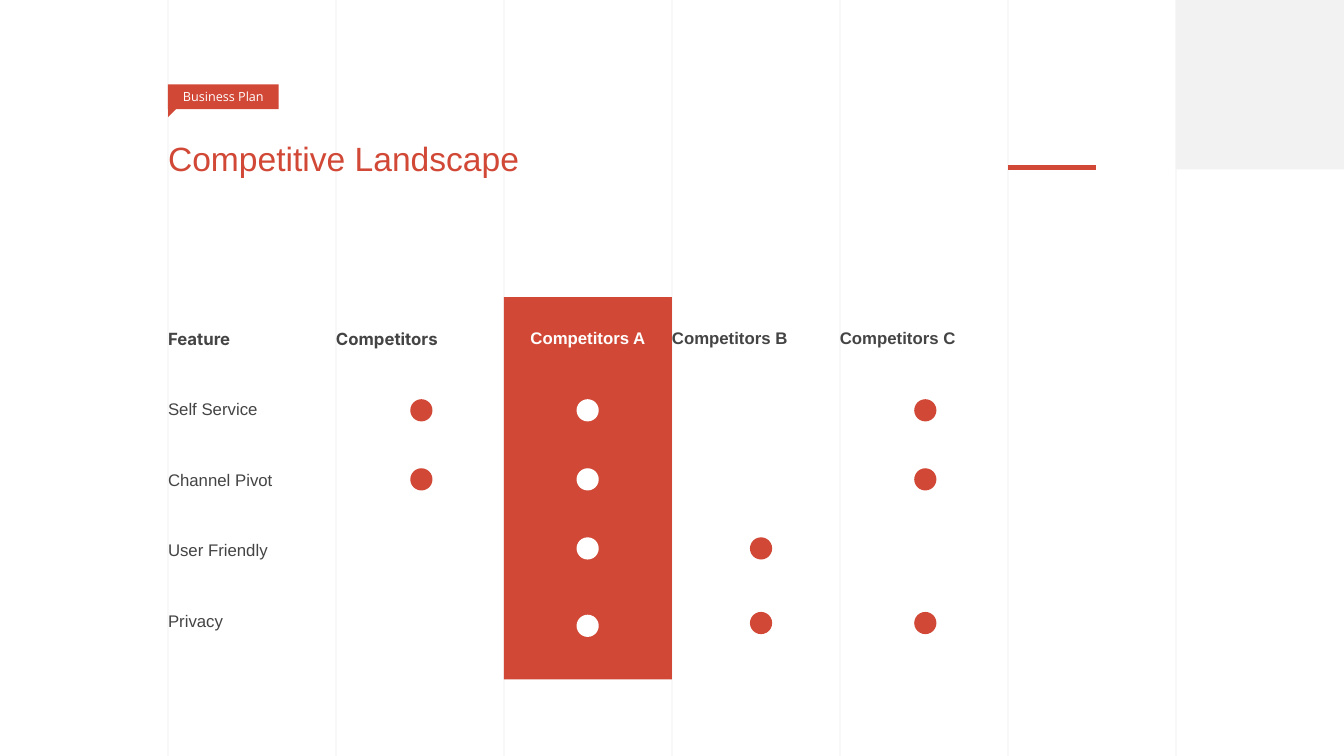
from dataclasses import dataclass
from typing import Any

from lxml.etree import SubElement
from pptx import Presentation
from pptx.dml.color import RGBColor
from pptx.enum.shapes import MSO_CONNECTOR, MSO_SHAPE
from pptx.enum.text import MSO_ANCHOR, PP_ALIGN
from pptx.oxml.ns import qn
from pptx.util import Cm, Pt

HUES = {"red": "D14836", "white": "FFFFFF", "ink": "444444", "pale": "F2F2F2"}
WIDE, HIGH = 33.87, 19.05
COL = WIDE / 8
ROW = 1.78
DOT = 0.56
DOT_TOP, DOT_STEP = 10.06, 1.74
PLAIN = "{2D5ABB26-0587-4C30-8999-92F81FD0307C}"
ZERO = {"margin_left": 0, "margin_top": 0, "margin_right": 0, "margin_bottom": 0}
HEADS = ["Feature", "Competitors", "", "Competitors B", "Competitors C"]
NAMES = ["Self Service", "Channel Pivot", "User Friendly", "Privacy"]


@dataclass
class Block:
    left: float
    top: float
    width: float
    height: float
    hue: str
    kind: MSO_SHAPE = MSO_SHAPE.RECTANGLE


@dataclass
class Rule:
    start: tuple[float, float]
    end: tuple[float, float]
    hue: str
    weight: float
    alpha: int = 100


@dataclass
class Track:
    left: float
    hue: str
    rows: list[int]
    last: float = 15.42


TRACKS = [
    Track(10.34, "red", [0, 1]),
    Track(14.53, "white", [0, 1, 2, 3], 15.49),
    Track(18.9, "red", [2, 3]),
    Track(23.04, "red", [0, 1, 3]),
]


def tint(hue: str) -> RGBColor:
    return RGBColor.from_string(HUES[hue])


def apply(item: Any, looks: dict[str, Any]) -> None:
    for name, value in looks.items():
        setattr(item, name, value)


def write(frame: Any, text: str, hue: str, looks: dict[str, Any],
          align: PP_ALIGN = PP_ALIGN.LEFT) -> None:
    frame.text = text
    line = frame.paragraphs[0]
    line.alignment = align
    font = line.runs[0].font
    apply(font, looks)
    font.color.rgb = tint(hue)


def draw(shapes: Any, block: Block) -> Any:
    shape = shapes.add_shape(block.kind, Cm(block.left), Cm(block.top),
                             Cm(block.width), Cm(block.height))
    shape.shadow.inherit = False
    shape.fill.solid()
    shape.fill.fore_color.rgb = tint(block.hue)
    shape.line.fill.background()
    return shape


def rule(shapes: Any, spec: Rule) -> None:
    ends = [Cm(n) for n in spec.start + spec.end]
    line = shapes.add_connector(MSO_CONNECTOR.STRAIGHT, *ends)
    line.line.width = Pt(spec.weight)
    line.line.color.rgb = tint(spec.hue)
    props = line._element.spPr
    SubElement(props, qn("a:effectLst"))
    if spec.alpha < 100:
        paint = next(props.iter(qn("a:srgbClr")))
        SubElement(paint, qn("a:alpha")).set("val", str(spec.alpha * 1000))


def grid(shapes: Any) -> None:
    for step in range(1, 8):
        rule(shapes, Rule((step * COL, 0), (step * COL, HIGH), "ink", 0.5, 10))
    draw(shapes, Block(7 * COL, 0, COL, 4.27, "pale"))


def head(slide: Any) -> None:
    title = slide.shapes.title
    slide.shapes._spTree.append(title._element)
    apply(title, {"left": Cm(COL), "top": Cm(3.48), "width": Cm(12.7), "height": Cm(2.84)})
    apply(title.text_frame, ZERO | {"vertical_anchor": MSO_ANCHOR.TOP, "word_wrap": True})
    write(title.text_frame, "Competitive Landscape", "red", {"size": Pt(24), "name": "Arial"})


def table(shapes: Any) -> None:
    frame = shapes.add_table(5, 5, Cm(COL), Cm(7.65), Cm(5 * COL), Cm(5 * ROW))
    chart = frame.table
    apply(chart, {"first_row": False, "horz_banding": False})
    next(chart._tbl.iter(qn("a:tableStyleId"))).text = PLAIN
    for row in chart.rows:
        row.height = Cm(ROW)
    for r, texts in enumerate([HEADS] + [[name] + [""] * 4 for name in NAMES]):
        for c, text in enumerate(texts):
            cell = chart.cell(r, c)
            cell.fill.background()
            apply(cell, ZERO | {"vertical_anchor": MSO_ANCHOR.MIDDLE})
            if text:
                face = "Inter" if r == 0 and c < 2 else "Arial"
                write(cell.text_frame, text, "ink",
                      {"size": Pt(12), "name": face, "bold": r == 0})


def band(shapes: Any) -> None:
    shape = draw(shapes, Block(3 * COL, 7.49, COL, 9.63, "red"))
    apply(shape.text_frame, ZERO | {"margin_top": Cm(0.76), "word_wrap": True,
                                    "vertical_anchor": MSO_ANCHOR.TOP})
    write(shape.text_frame, "Competitors A", "white",
          {"size": Pt(12), "name": "Arial", "bold": True}, PP_ALIGN.CENTER)


def dots(shapes: Any) -> None:
    for track in TRACKS:
        for row in track.rows:
            top = track.last if row == 3 else DOT_TOP + row * DOT_STEP
            draw(shapes, Block(track.left, top, DOT, DOT, track.hue, MSO_SHAPE.OVAL))


def tag(shapes: Any) -> None:
    group = shapes.add_group_shape().shapes
    label = draw(group, Block(COL, 2.13, 2.79, 0.62, "red"))
    apply(label.text_frame, ZERO | {"vertical_anchor": MSO_ANCHOR.MIDDLE, "word_wrap": True})
    write(label.text_frame, "Business Plan", "white",
          {"size": Pt(9), "name": "Open Sans"}, PP_ALIGN.CENTER)
    tail = draw(group, Block(COL, 2.75, 0.2, 0.2, "red", MSO_SHAPE.RIGHT_TRIANGLE))
    tail.rotation = 90


def main() -> None:
    deck = Presentation()
    apply(deck, {"slide_width": Cm(WIDE), "slide_height": Cm(HIGH)})
    slide = deck.slides.add_slide(deck.slide_layouts.get_by_name("Title Only"))
    shapes = slide.shapes
    grid(shapes)
    head(slide)
    table(shapes)
    band(shapes)
    dots(shapes)
    tag(shapes)
    rule(shapes, Rule((25.4, 4.22), (27.61, 4.22), "red", 4))
    deck.save("out.pptx")


if __name__ == "__main__":
    main()
